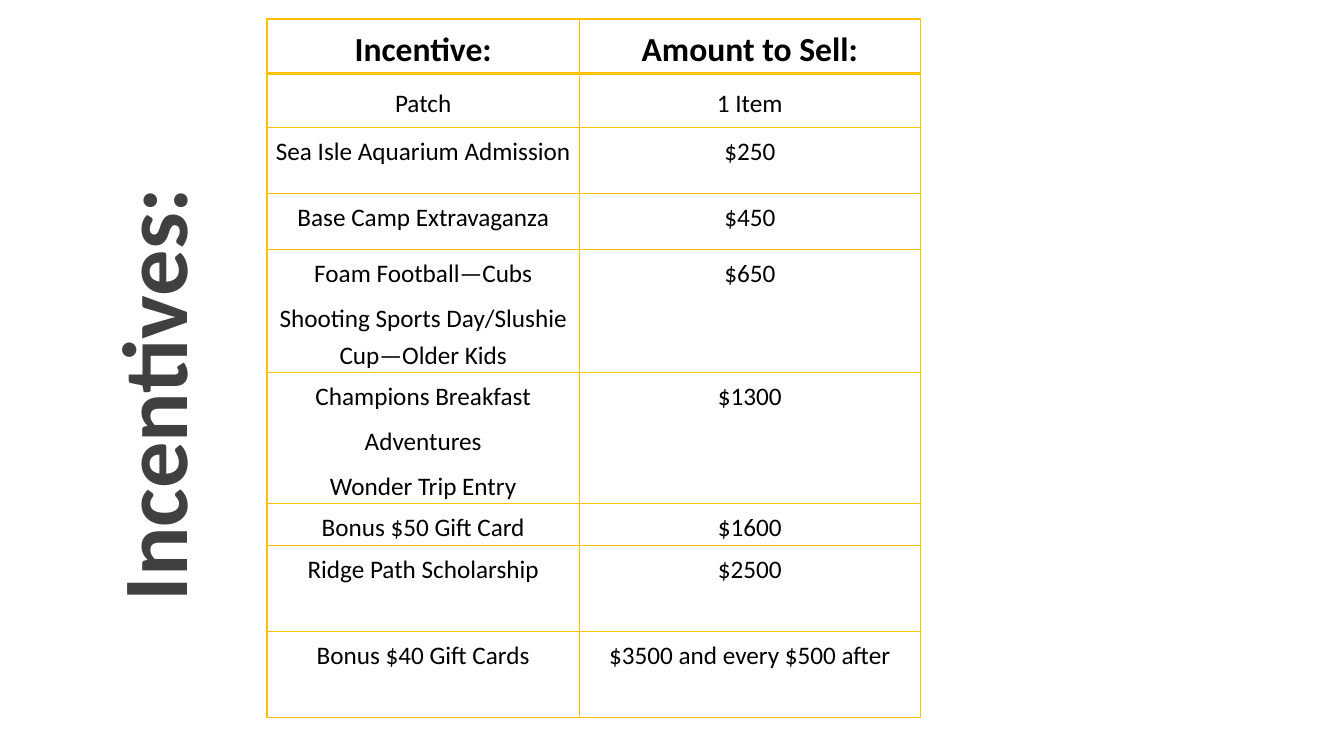
from lxml.etree import SubElement
from pptx import Presentation
from pptx.dml.color import RGBColor
from pptx.enum.text import MSO_ANCHOR, MSO_AUTO_SIZE, PP_ALIGN
from pptx.oxml.ns import qn
from pptx.util import Cm, Pt

COLORS = {"title": "404040", "text": "000000", "cell": "FFFFFF", "border": "FFC000"}
FONT = "Calibri"
THIN, THICK = 1, 2.25

# Each row: height in cm, incentive lines, amount to sell
INCENTIVES = [
    (0.71, ["Incentive:"], "Amount to Sell:"),
    (1.37, ["Patch"], "1 Item"),
    (1.65, ["Sea Isle Aquarium Admission"], "$250"),
    (1.42, ["Base Camp Extravaganza"], "$450"),
    (1.32, ["Foam Football—Cubs",
            "Shooting Sports Day/Slushie Cup—Older Kids"], "$650"),
    (1.93, ["Champions Breakfast", "Adventures", "Wonder Trip Entry"], "$1300"),
    (0.79, ["Bonus $50 Gift Card"], "$1600"),
    (2.16, ["Ridge Path Scholarship"], "$2500"),
    (2.16, ["Bonus $40 Gift Cards"], "$3500 and every $500 after"),
]
COLUMN_WIDTHS = (7.87, 8.59)


def write_text(frame, lines, size, color="text", bold=False, align=PP_ALIGN.LEFT,
               spacing=None, after=None):
    for index, line in enumerate(lines):
        paragraph = frame.paragraphs[0] if index == 0 else frame.add_paragraph()
        paragraph.alignment = align
        if spacing is not None:
            paragraph.line_spacing = spacing
        if after is not None:
            paragraph.space_after = Pt(after)
        run = paragraph.add_run()
        run.text = line
        run.font.name = FONT
        run.font.size = Pt(size)
        run.font.bold = bold
        run.font.color.rgb = RGBColor.from_string(COLORS[color])


def set_borders(cell, top, bottom):
    properties = cell._tc.get_or_add_tcPr()
    for side, width in (("L", THIN), ("R", THIN), ("T", top), ("B", bottom)):
        border = SubElement(properties, qn(f"a:ln{side}"), w=str(Pt(width)))
        fill = SubElement(border, qn("a:solidFill"))
        SubElement(fill, qn("a:srgbClr"), val=COLORS["border"])


def add_title(slide, left, top, width, height):
    """Place the vertical title, given its box before the quarter turn."""
    title = slide.shapes.add_textbox(Cm(left), Cm(top), Cm(width), Cm(height))
    title.rotation = 270
    frame = title.text_frame
    frame.word_wrap = True
    frame.auto_size = MSO_AUTO_SIZE.SHAPE_TO_FIT_TEXT
    write_text(frame, ["Incentives:"], 66, color="title", bold=True)


def add_incentives(slide, left, top, width, height):
    table = slide.shapes.add_table(len(INCENTIVES), len(COLUMN_WIDTHS), Cm(left),
                                   Cm(top), Cm(width), Cm(height)).table
    table.first_row = table.horz_banding = False
    for column, column_width in zip(table.columns, COLUMN_WIDTHS):
        column.width = Cm(column_width)

    for index, (row_height, incentive, amount) in enumerate(INCENTIVES):
        table.rows[index].height = Cm(row_height)
        header = index == 0
        for cell, lines in zip(table.rows[index].cells, (incentive, [amount])):
            cell.margin_left = cell.margin_right = Cm(0.08)
            cell.margin_top = cell.margin_bottom = Cm(0.08)
            # Only the patch row is centred vertically
            cell.vertical_anchor = MSO_ANCHOR.MIDDLE if index == 1 else MSO_ANCHOR.TOP
            set_borders(cell, top=THICK if index == 1 else THIN,
                        bottom=THICK if header else THIN)
            cell.fill.solid()
            cell.fill.fore_color.rgb = RGBColor.from_string(COLORS["cell"])
            write_text(cell.text_frame, lines, 24 if header else 18, bold=header,
                       align=PP_ALIGN.CENTER, spacing=1.19, after=6)


def main():
    deck = Presentation()
    deck.slide_width, deck.slide_height = Cm(33.87), Cm(19.05)
    slide = deck.slides.add_slide(deck.slide_layouts[6])
    add_title(slide, -12.14, -2.08, 31.9, 3.07)
    add_incentives(slide, 6.73, 0.48, sum(COLUMN_WIDTHS),
                   sum(row[0] for row in INCENTIVES))
    deck.save("out.pptx")


if __name__ == "__main__":
    main()
